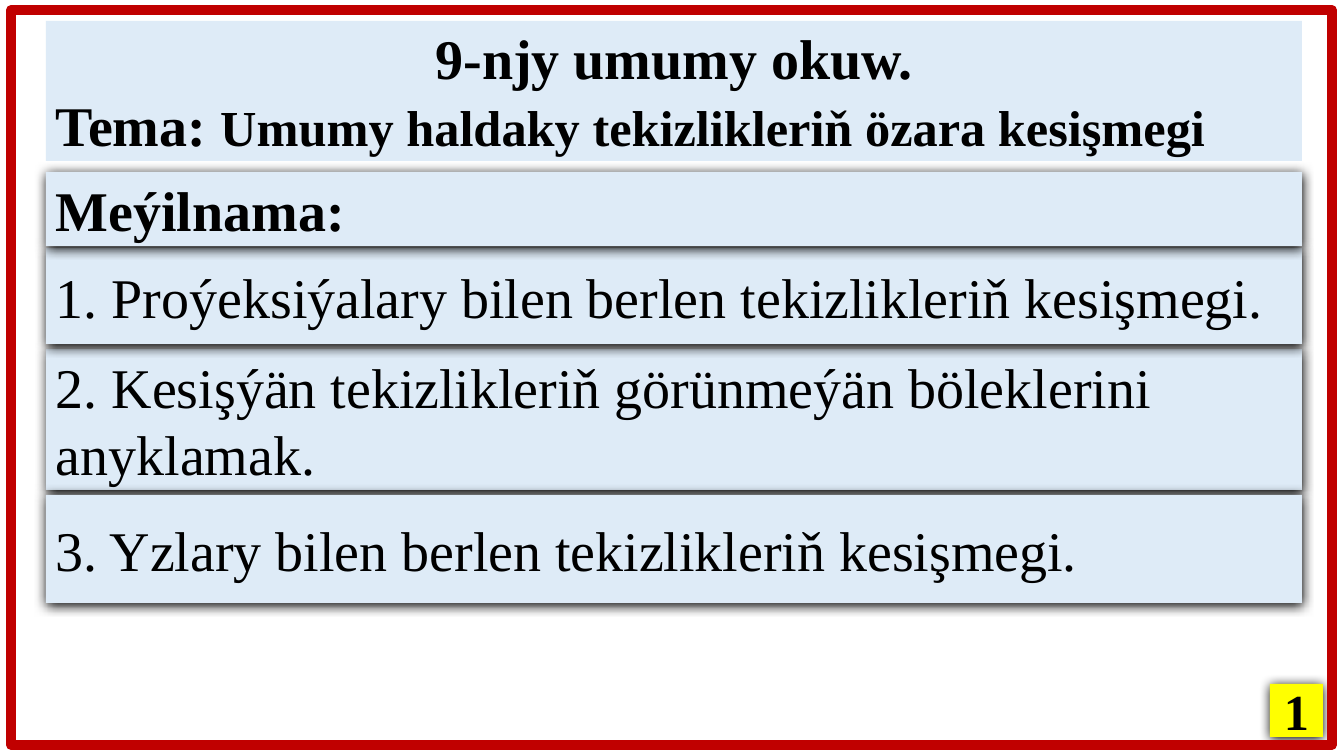
import pptx
import pptx.util
import pptx.dml.color
import pptx.enum.shapes
import pptx.enum.text
import pptx.oxml
import pptx.oxml.ns
from dataclasses import dataclass

SHAPE = pptx.enum.shapes.MSO_SHAPE
ALIGN = pptx.enum.text.PP_ALIGN
SHADOW = (
    '<a:outerShdw %s blurRad="107950" dist="12700" dir="5400000" algn="ctr" rotWithShape="0">'
    '<a:srgbClr val="000000"/></a:outerShdw>' % pptx.oxml.ns.nsdecls("a")
)


@dataclass(frozen=True)
class Theme:
    font: str = "Times New Roman"
    text: str = "000000"
    panel: str = "DEEBF7"
    badge: str = "FFFF00"
    frame: str = "C00000"
    large: int = 40
    medium: int = 36
    frame_width: int = 7


def rgb(code):
    return pptx.dml.color.RGBColor.from_string(code)


class Deck:
    EMU_PER_PX = 12192000 / 1344

    def __init__(self, theme):
        self.theme = theme
        self.prs = pptx.Presentation()
        self.prs.slide_width = self.px(1344)
        self.prs.slide_height = self.px(756)
        self.s = self.prs.slides.add_slide(self.prs.slide_layouts[6])

    def px(self, n):
        return pptx.util.Emu(round(n * self.EMU_PER_PX))

    def shape(self, kind, box, fill=None, shadow=False):
        sp = self.s.shapes.add_shape(kind, *map(self.px, box))
        sp.shadow.inherit = False
        if shadow:
            effects = sp.element.spPr.find(pptx.oxml.ns.qn("a:effectLst"))
            effects.append(pptx.oxml.parse_xml(SHADOW))
        sp.line.fill.background()
        if fill:
            sp.fill.solid()
            sp.fill.fore_color.rgb = rgb(fill)
        else:
            sp.fill.background()
        return sp

    def set_text(self, sp, paragraphs):
        """Fill a shape from (alignment, [(text, size, bold), ...]) paragraphs."""
        tf = sp.text_frame
        tf.word_wrap = True
        tf.vertical_anchor = pptx.enum.text.MSO_ANCHOR.MIDDLE
        for i, (align, runs) in enumerate(paragraphs):
            p = tf.add_paragraph() if i else tf.paragraphs[0]
            p.alignment = align
            for text, size, bold in runs:
                r = p.add_run()
                r.text = text
                r.font.name = self.theme.font
                r.font.size = pptx.util.Pt(size)
                r.font.bold = bold
                r.font.color.rgb = rgb(self.theme.text)

    def title(self, box, heading, label, topic):
        t = self.theme
        sp = self.shape(SHAPE.ROUNDED_RECTANGLE, box, t.panel)
        sp.adjustments[0] = 0
        self.set_text(sp, [
            (ALIGN.CENTER, [(heading, t.large, True)]),
            (ALIGN.LEFT, [(label, t.large, True), (topic, t.medium, True)]),
        ])

    def plan_row(self, box, text, bold):
        sp = self.shape(SHAPE.PENTAGON, box, self.theme.panel, shadow=True)
        sp.adjustments[0] = 0
        sp.element.spPr.xfrm.set("flipH", "1")
        self.set_text(sp, [(ALIGN.LEFT, [(text, self.theme.large, bold)])])

    def page_number(self, box, number):
        sp = self.shape(SHAPE.RECTANGLE, box, self.theme.badge, shadow=True)
        self.set_text(sp, [(ALIGN.CENTER, [(number, self.theme.medium, True)])])

    def frame(self, box):
        sp = self.shape(SHAPE.RECTANGLE, box)
        sp.line.color.rgb = rgb(self.theme.frame)
        sp.line.width = pptx.util.Pt(self.theme.frame_width)


def main():
    left, width = 46, 1256
    plan = [  # back to front: top, height, text, bold
        (349, 141, "2. Kesişýän tekizlikleriň görünmeýän böleklerini anyklamak.", False),
        (248, 96, "1. Proýeksiýalary bilen berlen tekizlikleriň kesişmegi.", False),
        (172, 74, "Meýilnama:", True),
        (495, 108, "3. Yzlary bilen berlen tekizlikleriň kesişmegi.", False),
    ]
    deck = Deck(Theme())
    deck.page_number((1270, 684, 53, 53), "1")
    deck.title((left, 21, width, 140), "9-njy umumy okuw.", "Tema: ",
               "Umumy haldaky tekizlikleriň özara kesişmegi")
    for top, height, text, bold in plan:
        deck.plan_row((left, top, width, height), text, bold)
    deck.frame((11, 10, 1321, 735))
    deck.prs.save("out.pptx")


if __name__ == "__main__":
    main()
